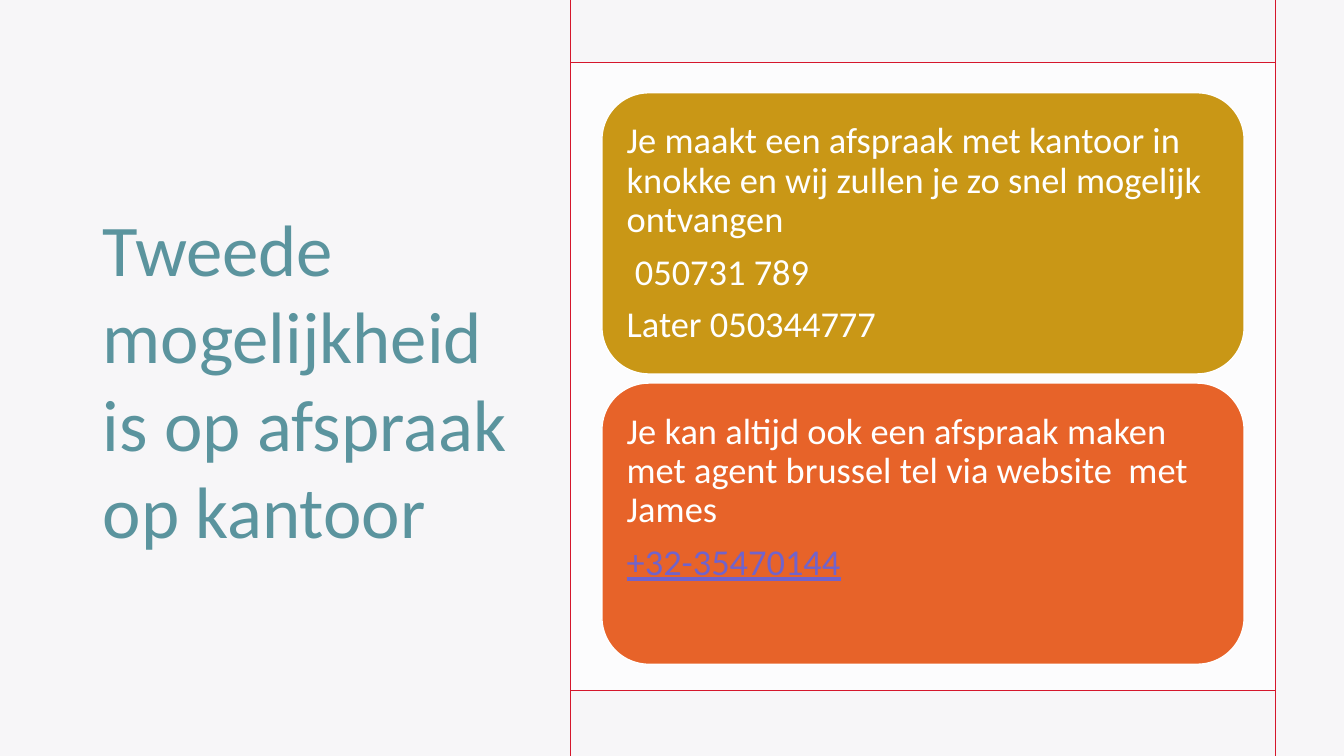
import pptx
import pptx.util
import pptx.dml.color
import pptx.enum.shapes
import pptx.enum.text
import pptx.oxml.ns
from lxml import etree

Inches = pptx.util.Inches
Pt = pptx.util.Pt
SHAPES = pptx.enum.shapes.MSO_SHAPE
ANCHOR = pptx.enum.text.MSO_ANCHOR
qn = pptx.oxml.ns.qn

FONT = "Calibri"
COLORS = {
    "background": "F7F6F8",
    "title": "5B949E",
    "white": "FFFFFF",
    "frame": "D5172C",
    "gold": "C99716",
    "orange": "E76329",
    "phone": "7163CB",
}
SLIDE_W, SLIDE_H = 13.33, 7.5
FRAME_LEFT, FRAME_RIGHT = 5.66, 12.65
FRAME_TOP, FRAME_BOTTOM = 0.62, 6.85
CARD_LEFT, CARD_TOP, CARD_W, CARD_H, CARD_PITCH = 5.97, 0.92, 6.37, 2.79, 2.88

# Each card: fill and paragraphs of (text, color, underline)
CARDS = [
    ("gold", [
        ("Je maakt een afspraak met kantoor in knokke en wij zullen je zo snel "
         "mogelijk ontvangen", "white", False),
        (" 050731 789", "white", False),
        ("Later 050344777", "white", False),
    ]),
    ("orange", [
        ("Je kan altijd ook een afspraak maken met agent brussel tel via "
         "website  met James", "white", False),
        ("+32-35470144", "phone", True),
    ]),
]


def rgb(name):
    return pptx.dml.color.RGBColor.from_string(COLORS[name])


def add_run(p, text, size, color, underline=False):
    r = p.add_run()
    r.text = text
    r.font.name = FONT
    r.font.size = Pt(size)
    r.font.color.rgb = rgb(color)
    if underline:
        r.font.underline = True


def add_title(s, text):
    sp = s.shapes.add_textbox(Inches(0.92), Inches(0.64), Inches(4.5), Inches(6.23))
    tf = sp.text_frame
    tf.word_wrap = True
    tf.vertical_anchor = ANCHOR.MIDDLE
    tf.margin_right = Inches(0.2)
    add_run(tf.paragraphs[0], text, 52, "title")


def add_panel(s):
    """Add the translucent white area behind the cards."""
    sp = s.shapes.add_shape(
        SHAPES.RECTANGLE, Inches(FRAME_LEFT), Inches(FRAME_TOP),
        Inches(FRAME_RIGHT - FRAME_LEFT), Inches(FRAME_BOTTOM - FRAME_TOP))
    sp.shadow.inherit = False
    sp.line.fill.background()
    sp.fill.solid()
    sp.fill.fore_color.rgb = rgb("white")
    color = sp.fill._xPr.find(qn("a:solidFill")).find(qn("a:srgbClr"))
    etree.SubElement(color, qn("a:alpha")).set("val", "75000")


def add_line(s, x1, y1, x2, y2):
    line = s.shapes.add_connector(
        pptx.enum.shapes.MSO_CONNECTOR.STRAIGHT,
        Inches(x1), Inches(y1), Inches(x2), Inches(y2))
    line.line.color.rgb = rgb("frame")
    line.line.width = Pt(1)
    etree.SubElement(line._element.spPr, qn("a:effectLst"))


def add_card(s, top, fill, paragraphs):
    sp = s.shapes.add_shape(
        SHAPES.ROUNDED_RECTANGLE, Inches(CARD_LEFT), Inches(top),
        Inches(CARD_W), Inches(CARD_H))
    sp.shadow.inherit = False
    sp.fill.solid()
    sp.fill.fore_color.rgb = rgb(fill)
    sp.line.color.rgb = rgb("white")
    sp.line.width = Pt(1)
    tf = sp.text_frame
    tf.word_wrap = True
    tf.vertical_anchor = ANCHOR.TOP
    tf.margin_left = tf.margin_right = tf.margin_bottom = Inches(0.11)
    tf.margin_top = Inches(0.16)
    for i, (text, color, underline) in enumerate(paragraphs):
        p = tf.add_paragraph() if i else tf.paragraphs[0]
        p.alignment = pptx.enum.text.PP_ALIGN.LEFT
        p.line_spacing = 0.9
        p.space_after = Pt(9.5)
        add_run(p, text, 26, color, underline)


def main():
    prs = pptx.Presentation()
    prs.slide_width, prs.slide_height = Inches(SLIDE_W), Inches(SLIDE_H)
    s = prs.slides.add_slide(prs.slide_layouts[6])
    s.background.fill.solid()
    s.background.fill.fore_color.rgb = rgb("background")

    add_title(s, "Tweede mogelijkheid is op afspraak op kantoor")
    add_panel(s)
    for y in (FRAME_TOP, FRAME_BOTTOM):
        add_line(s, FRAME_LEFT, y, FRAME_RIGHT, y)
    for x in (FRAME_LEFT, FRAME_RIGHT):
        add_line(s, x, 0, x, SLIDE_H)
    for i, (fill, paragraphs) in enumerate(CARDS):
        add_card(s, CARD_TOP + i * CARD_PITCH, fill, paragraphs)

    prs.save("out.pptx")


if __name__ == "__main__":
    main()
